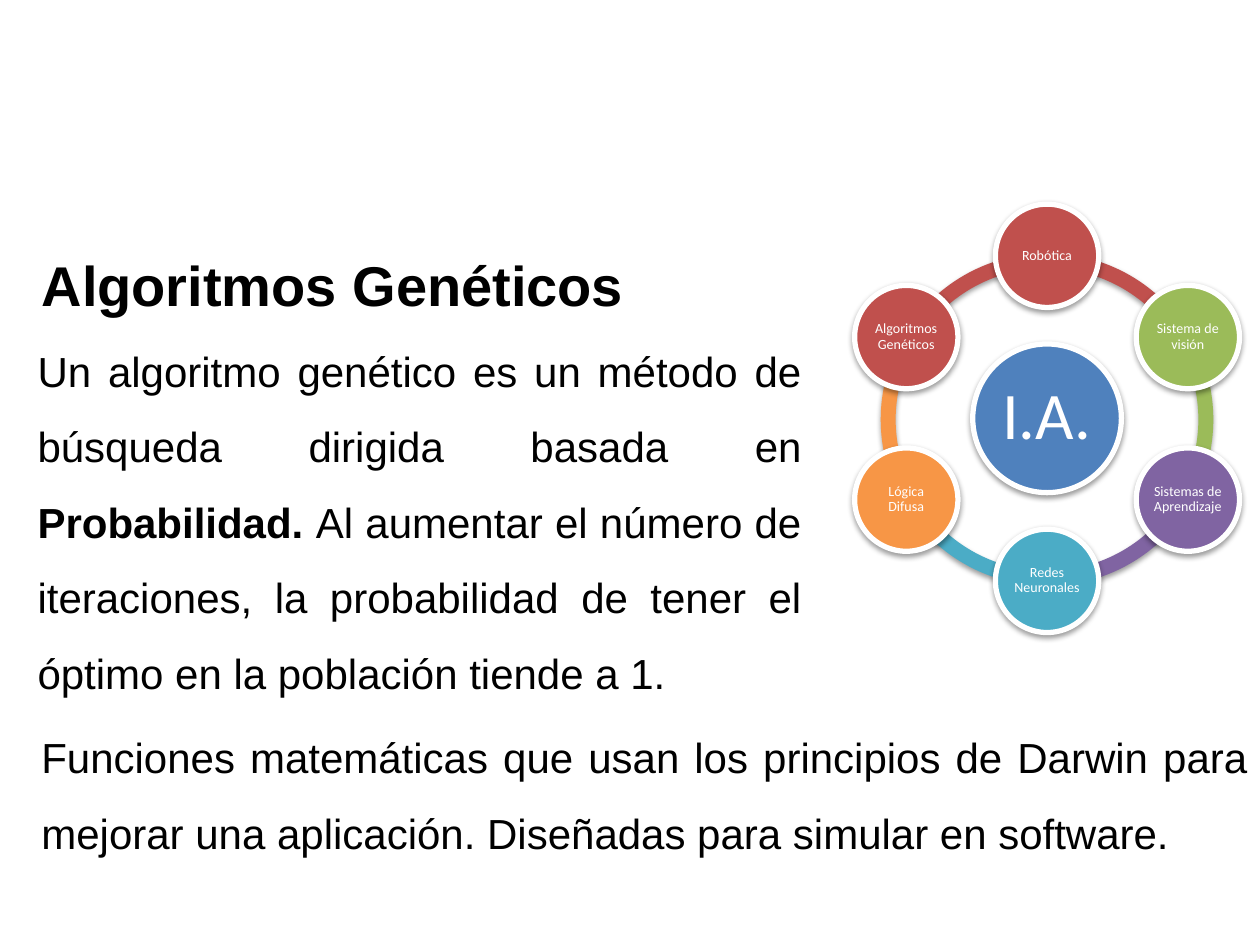
import math
from dataclasses import dataclass

from lxml import etree
from pptx import Presentation
from pptx.dml.color import RGBColor
from pptx.enum.shapes import MSO_SHAPE
from pptx.enum.text import MSO_ANCHOR, MSO_AUTO_SIZE, PP_ALIGN
from pptx.oxml.ns import qn
from pptx.util import Inches, Pt

ARC, OVAL = MSO_SHAPE.BLOCK_ARC, MSO_SHAPE.OVAL
TOP, MIDDLE = MSO_ANCHOR.TOP, MSO_ANCHOR.MIDDLE
LEFT, CENTER, JUSTIFY = PP_ALIGN.LEFT, PP_ALIGN.CENTER, PP_ALIGN.JUSTIFY
FIT_SHAPE, NO_FIT = MSO_AUTO_SIZE.SHAPE_TO_FIT_TEXT, MSO_AUTO_SIZE.NONE


@dataclass(frozen=True)
class Theme:
    text: str = "000000"
    white: str = "FFFFFF"
    blue: str = "4F81BD"
    red: str = "C0504D"
    green: str = "9BBB59"
    purple: str = "8064A2"
    teal: str = "4BACC6"
    orange: str = "F79646"
    body_font: str = "Arial"
    ring_font: str = "Calibri"
    title_size: int = 32
    body_size: int = 24
    hub_size: int = 38
    node_size: int = 8


theme = Theme()


def add_run(p, text, font, size, color, bold=False):
    r = p.add_run()
    r.text = text
    r.font.name = font
    r.font.size = Pt(size)
    r.font.bold = bold
    r.font.color.rgb = RGBColor.from_string(color)


def add_part(group, kind, diameter, cx, cy, color):
    sp = group.shapes.add_shape(
        kind, Inches(cx - diameter / 2), Inches(cy - diameter / 2),
        Inches(diameter), Inches(diameter))
    sp.fill.solid()
    sp.fill.fore_color.rgb = RGBColor.from_string(color)
    sp.line.fill.background()
    sp.shadow.inherit = False
    effects = sp._element.spPr.find(qn("a:effectLst"))
    shadow = etree.SubElement(effects, qn("a:outerShdw"), blurRad="40000",
                              dist="20000", dir="5400000", rotWithShape="0")
    clr = etree.SubElement(shadow, qn("a:srgbClr"), val="000000")
    etree.SubElement(clr, qn("a:alpha"), val="38000")
    return sp


prs = Presentation()
prs.slide_width, prs.slide_height = Inches(10), Inches(7.5)
s = prs.slides.add_slide(prs.slide_layouts[5])

title = s.shapes.title
title.left, title.top = Inches(0.23), Inches(1.94)
title.width, title.height = Inches(5.28), Inches(0.64)
tf = title.text_frame
tf.auto_size = NO_FIT
tf.vertical_anchor = TOP
p = tf.paragraphs[0]
p.alignment = LEFT
add_run(p, "Algoritmos Genéticos", theme.body_font, theme.title_size, theme.text, True)

paragraphs = [
    ((0.2, 2.49, 6.26, 3.06), [
        ("Un algoritmo genético es un método de búsqueda dirigida basada en ", False),
        ("Probabilidad. ", True),
        ("Al aumentar el número de iteraciones, la probabilidad de tener el "
         "óptimo en la población tiende a 1.", False)]),
    ((0.23, 5.56, 9.77, 1.24), [
        ("Funciones matemáticas que usan los principios de Darwin para mejorar "
         "una aplicación. Diseñadas para simular en software.", False)]),
]
for box, runs in paragraphs:
    tf = s.shapes.add_textbox(*map(Inches, box)).text_frame
    tf.word_wrap = True
    tf.auto_size = FIT_SHAPE
    p = tf.paragraphs[0]
    p.alignment = JUSTIFY
    p.line_spacing = 1.5
    for text, bold in runs:
        add_run(p, text, theme.body_font, theme.body_size, theme.text, bold)

nodes = [
    ("Robótica", theme.red),
    ("Sistema de visión", theme.green),
    ("Sistemas de Aprendizaje", theme.purple),
    ("Redes Neuronales", theme.teal),
    ("Lógica Difusa", theme.orange),
    ("Algoritmos Genéticos", theme.red),
]
CX, CY, RADIUS = 8.31, 3.32, 1.29
STEP = 360 / len(nodes)
DEGREE = 0.6
ring = s.shapes.add_group_shape()

for i, (label, color) in reversed(list(enumerate(nodes))):
    start = (270 + i * STEP) % 360
    sp = add_part(ring, ARC, 2.64, CX, CY + 0.01, color)
    sp.adjustments[0] = start * DEGREE
    sp.adjustments[1] = (start + STEP) % 360 * DEGREE
    sp.adjustments[2] = 0.045

circles = [("I.A.", theme.blue, CX, CY, 1.18, theme.hub_size, 0.05)]
for i, (label, color) in enumerate(nodes):
    angle = math.radians(i * STEP)
    circles.append((label, color, CX + RADIUS * math.sin(angle),
                    CY - RADIUS * math.cos(angle), 0.82, theme.node_size, 0.01))

for label, color, x, y, diameter, size, inset in circles:
    sp = add_part(ring, OVAL, diameter, x, y, color)
    sp.line.color.rgb = RGBColor.from_string(theme.white)
    sp.line.width = Pt(3)
    tf = sp.text_frame
    tf.word_wrap = True
    tf.vertical_anchor = MIDDLE
    tf.margin_left = tf.margin_right = Inches(inset)
    tf.margin_top = tf.margin_bottom = Inches(inset)
    p = tf.paragraphs[0]
    p.alignment = CENTER
    p.line_spacing = 0.9
    add_run(p, label, theme.ring_font, size, theme.white)

prs.save("out.pptx")
